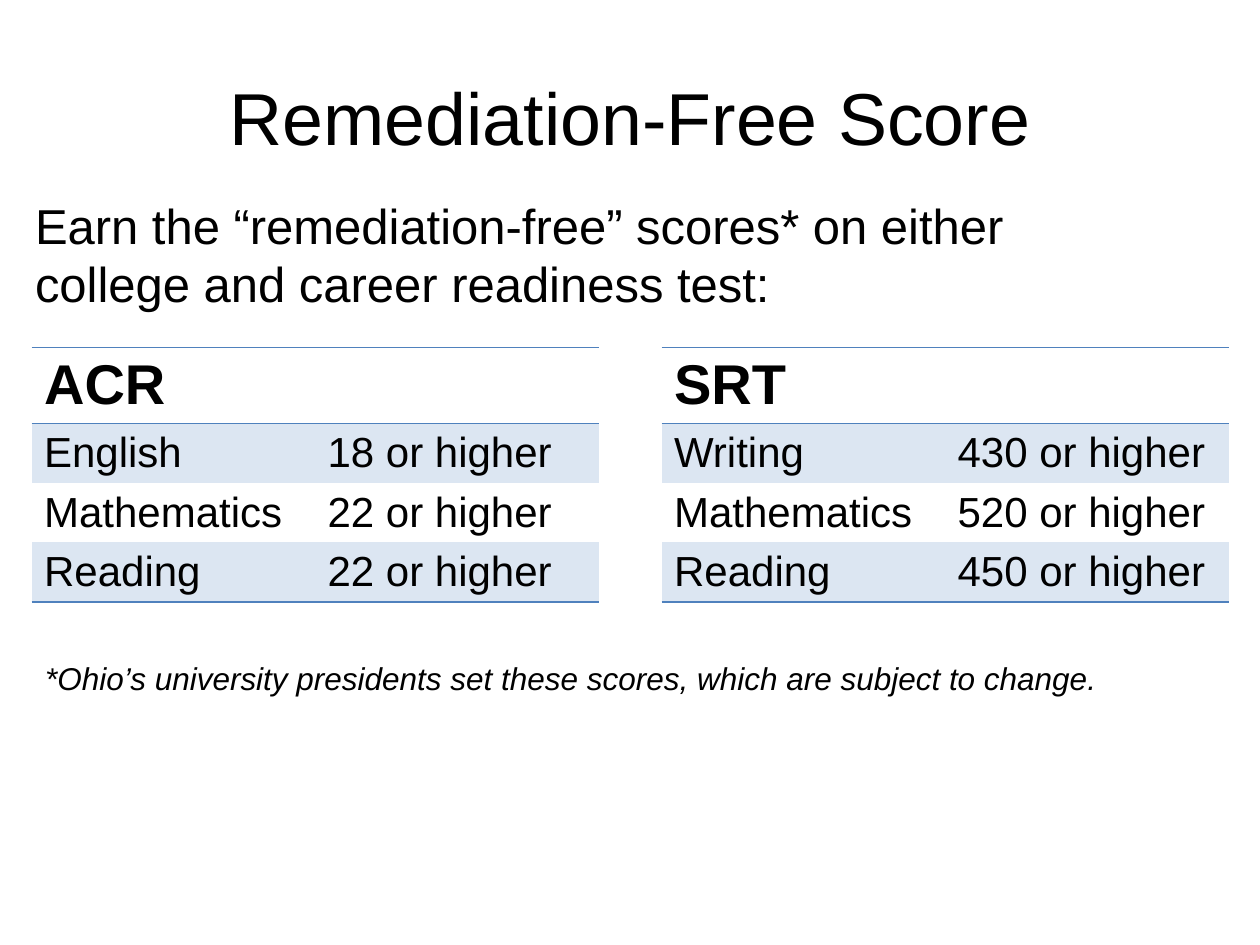
from dataclasses import dataclass

from lxml.etree import SubElement
from pptx import Presentation
from pptx.dml.color import RGBColor
from pptx.enum.text import MSO_ANCHOR as Anchor, PP_ALIGN as Align
from pptx.oxml.ns import qn
from pptx.util import Inches, Pt


@dataclass(frozen=True)
class Theme:
    font: str = "Arial"
    text: str = "000000"
    rule: str = "4F81BD"
    band: str = "DCE6F2"
    title: int = 42
    heading: int = 32
    intro: int = 28
    cell: int = 24
    note: int = 18


@dataclass(frozen=True)
class ScoreTable:
    left: float
    test: str
    scores: tuple[tuple[str, str], ...]


THEME = Theme()
NO_STYLE = "{2D5ABB26-0587-4C30-8999-92F81FD0307C}"
TABLE_TOP, COLUMN_WIDTH, HEADER_HEIGHT, ROW_HEIGHT = 2.76, 2.25, 0.6, 0.47
TABLES = (
    ScoreTable(0.25, "ACR", (("English", "18 or higher"),
                             ("Mathematics", "22 or higher"),
                             ("Reading", "22 or higher"))),
    ScoreTable(5.25, "SRT", (("Writing", "430 or higher"),
                             ("Mathematics", "520 or higher"),
                             ("Reading", "450 or higher"))),
)


def write(frame, text: str, size: int, **formats) -> None:
    """Put one formatted paragraph into a text frame."""
    paragraph = frame.paragraphs[0]
    paragraph.text = text
    font = paragraph.font
    values = {"name": THEME.font, "size": Pt(size), "bold": False, **formats}
    for name, value in values.items():
        setattr(font, name, value)
    font.color.rgb = RGBColor.from_string(THEME.text)


def add_text(slide, left: float, top: float, width: float, height: float,
             text: str, size: int, **formats) -> None:
    box = slide.shapes.add_textbox(Inches(left), Inches(top),
                                   Inches(width), Inches(height))
    box.text_frame.word_wrap = True
    write(box.text_frame, text, size, **formats)


def add_border(cell, side: str) -> None:
    """Draw a one-point rule on a cell side, lnT or lnB."""
    properties = cell._tc.get_or_add_tcPr()
    line = SubElement(properties, qn(f"a:{side}"), w=str(Pt(1)))
    fill = SubElement(line, qn("a:solidFill"))
    SubElement(fill, qn("a:srgbClr"), val=THEME.rule)


def add_score_table(slide, spec: ScoreTable) -> None:
    rows = ((spec.test, ""), *spec.scores)
    last = len(rows) - 1
    frame = slide.shapes.add_table(
        len(rows), 2, Inches(spec.left), Inches(TABLE_TOP),
        Inches(2 * COLUMN_WIDTH), Inches(HEADER_HEIGHT + last * ROW_HEIGHT))
    table = frame.table
    table._tbl.tblPr.find(qn("a:tableStyleId")).text = NO_STYLE
    table.first_row = table.horz_banding = False
    for column in table.columns:
        column.width = Inches(COLUMN_WIDTH)

    for index, texts in enumerate(rows):
        header = index == 0
        table.rows[index].height = Inches(HEADER_HEIGHT if header else ROW_HEIGHT)
        for cell, text in zip(table.rows[index].cells, texts):
            write(cell.text_frame, text,
                  THEME.heading if header else THEME.cell, bold=header)
            if header:
                add_border(cell, "lnT")
            if index in (0, last):
                add_border(cell, "lnB")
            if index % 2:
                cell.fill.solid()
                cell.fill.fore_color.rgb = RGBColor.from_string(THEME.band)
            else:
                cell.fill.background()


def main() -> None:
    presentation = Presentation()
    presentation.slide_width, presentation.slide_height = Inches(10), Inches(7.5)
    slide = presentation.slides.add_slide(presentation.slide_layouts[5])

    # Title
    title = slide.shapes.title
    title.left, title.top = Inches(0.5), Inches(0.3)
    title.width, title.height = Inches(9), Inches(1.25)
    title.text_frame.vertical_anchor = Anchor.MIDDLE
    write(title.text_frame, "Remediation-Free Score", THEME.title)
    title.text_frame.paragraphs[0].alignment = Align.CENTER

    # Score tables
    for spec in TABLES:
        add_score_table(slide, spec)

    # Introduction and footnote
    add_text(slide, 0.18, 1.5, 8.5, 1.04,
             "Earn the “remediation-free” scores* on either college and "
             "career readiness test:", THEME.intro)
    add_text(slide, 0.26, 5.18, 9.25, 0.4,
             "*Ohio’s university presidents set these scores, which are "
             "subject to change.", THEME.note, italic=True)

    presentation.save("out.pptx")


if __name__ == "__main__":
    main()
